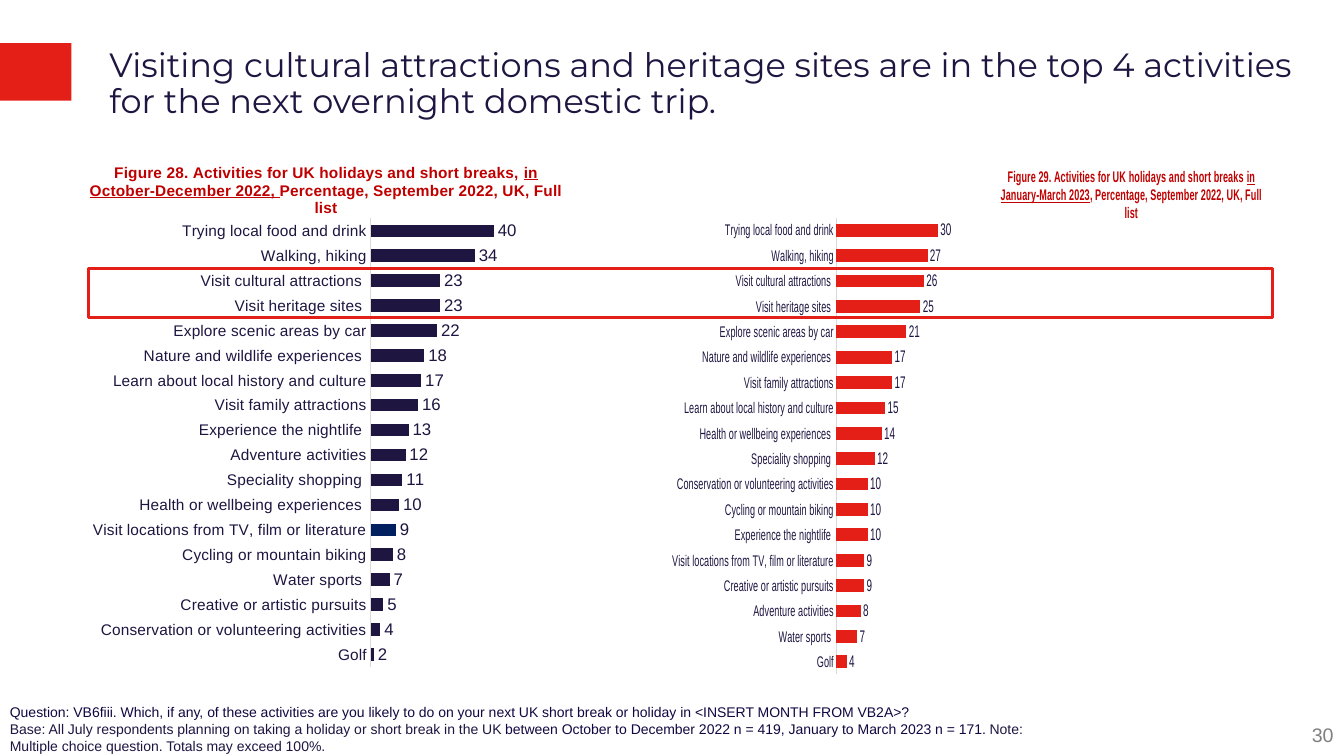
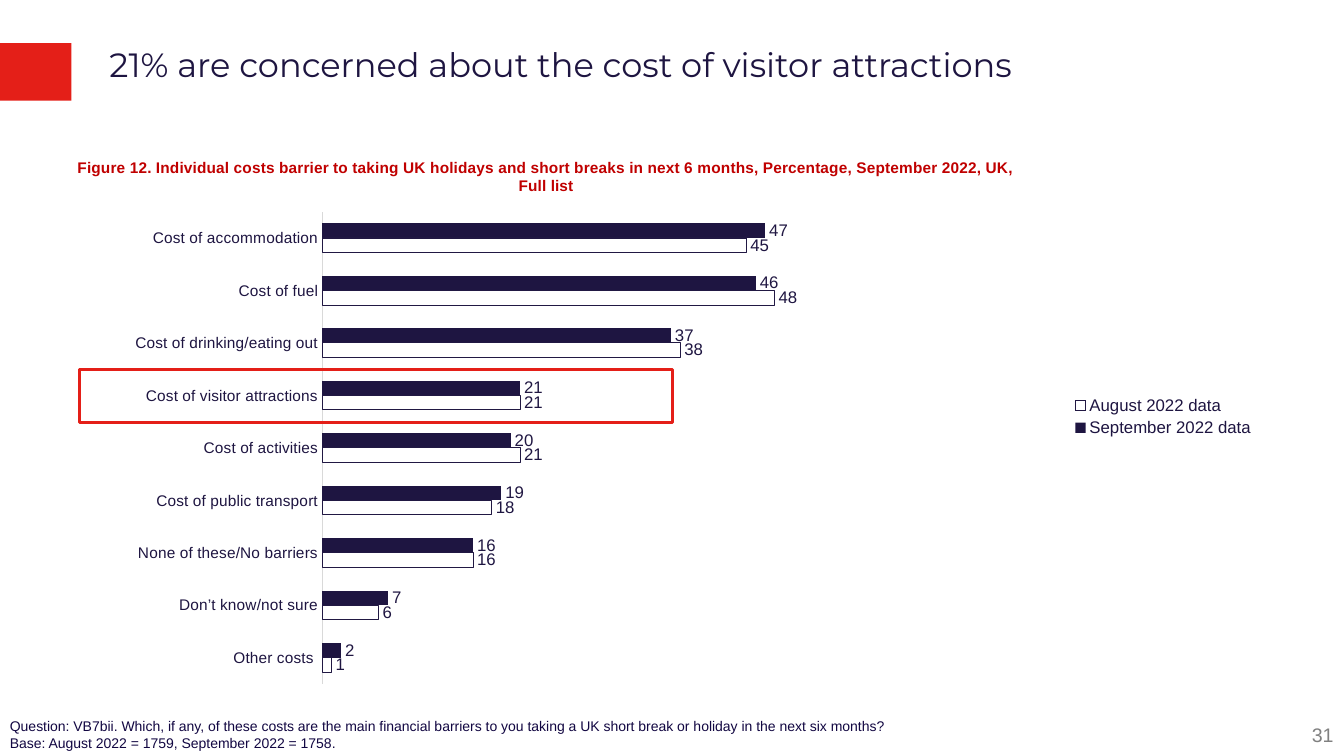
from lxml.etree import SubElement
from pptx import Presentation
from pptx.chart.data import CategoryChartData
from pptx.dml.color import RGBColor
from pptx.enum.chart import XL_CHART_TYPE, XL_LABEL_POSITION, XL_LEGEND_POSITION, XL_TICK_MARK
from pptx.enum.shapes import MSO_SHAPE
from pptx.enum.text import PP_ALIGN
from pptx.oxml.ns import qn
from pptx.util import Cm, Pt

NAVY = "1E1541"
OUTLINE = "211843"
INK = "120742"
BLUE = "002060"
RED = "E41F18"
DARK_RED = "C00000"
GREY = "808080"
AXIS_GREY = "D9D9D9"

FONTS = {
    "title": {"name": "Montserrat", "size": Pt(24), "color": NAVY},
    "figure": {"name": "Arial", "size": Pt(11), "bold": True, "color": DARK_RED},
    "category": {"name": "Arial", "size": Pt(11), "color": NAVY},
    "value": {"name": "Arial", "size": Pt(12), "color": NAVY},
    "note": {"name": "Arial", "size": Pt(10), "color": INK},
    "page": {"name": "Arial", "size": Pt(14), "color": GREY},
}


def rgb(value):
    return RGBColor.from_string(value)


def box(*lengths):
    return [Cm(length) for length in lengths]


def apply(target, values):
    for name, value in values.items():
        setattr(target, name, value)


def set_font(font, style, **changes):
    values = {**FONTS[style], **changes}
    font.color.rgb = rgb(values.pop("color"))
    apply(font, values)


def add_runs(paragraph, runs, style):
    for text, changes in runs:
        run = paragraph.add_run()
        run.text = text
        set_font(run.font, style, **changes)


def set_layout(parent, index, **values):
    existing = parent.find(qn("c:layout"))
    if existing is not None:
        parent.remove(existing)
    layout = SubElement(parent, qn("c:layout"))
    parent.insert(index, layout)
    manual = SubElement(layout, qn("c:manualLayout"))
    for name, value in values.items():
        SubElement(manual, qn(f"c:{name}")).set("val", str(value))


class Deck:
    """Hold the report style and add elements to the current slide."""

    def __init__(self):
        self.presentation = Presentation()
        apply(self.presentation, {"slide_width": Cm(33.87), "slide_height": Cm(19.05)})
        self.slide = None

    def add_slide(self, title, number):
        self.slide = self.presentation.slides.add_slide(self.presentation.slide_layouts[6])
        self.rectangle(box(0, 1.09, 1.8, 1.45), fill=RED)
        self.text(box(26.62, 18.08, 7.24, 0.86), [[(str(number), {})]], "page",
                  alignment=PP_ALIGN.RIGHT)
        self.text(box(2.51, 1.09, 30.5, 2.18), [[(title, {})]], "title", line_spacing=0.9)

    def text(self, place, paragraphs, style, **settings):
        frame = self.slide.shapes.add_textbox(*place).text_frame
        frame.word_wrap = True
        for index, runs in enumerate(paragraphs):
            paragraph = frame.add_paragraph() if index else frame.paragraphs[0]
            apply(paragraph, settings)
            add_runs(paragraph, runs, style)

    def rectangle(self, place, fill=None, line=None):
        shape = self.slide.shapes.add_shape(MSO_SHAPE.RECTANGLE, *place)
        shape.shadow.inherit = False
        self.paint(shape, fill, line, 2.25)

    def paint(self, target, fill, line, width):
        if fill:
            target.fill.solid()
            target.fill.fore_color.rgb = rgb(fill)
        else:
            target.fill.background()
        if line:
            target.line.color.rgb = rgb(line)
            target.line.width = Pt(width)
        else:
            target.line.fill.background()

    def bar_chart(self, place, title, title_at, plot_at, categories, series, minimum, gap):
        data = CategoryChartData(number_format="0")
        data.categories = categories
        for name, values, *_ in series:
            data.add_series(name, values)
        chart = self.slide.shapes.add_chart(XL_CHART_TYPE.BAR_CLUSTERED, *place, data).chart
        apply(chart.font, {"name": "Arial", "size": Pt(10)})
        chart.has_legend = len(series) > 1
        if chart.has_legend:
            apply(chart.legend, {"position": XL_LEGEND_POSITION.RIGHT, "include_in_layout": False})
            set_font(chart.legend.font, "value")
        self.figure_title(chart, title, title_at)
        self.axes(chart, minimum)
        plot = chart.plots[0]
        apply(plot, {"gap_width": gap, "vary_by_categories": False})
        for bars, (_, _, fill, line, label_color) in zip(plot.series, series):
            bars.invert_if_negative = False
            self.paint(bars.format, fill, line, 0.75)
            labels = bars.data_labels
            apply(labels, {"show_value": True, "number_format": "0",
                           "number_format_is_linked": False,
                           "position": XL_LABEL_POSITION.OUTSIDE_END})
            set_font(labels.font, "value", color=label_color)
        x, y, w, h = plot_at
        set_layout(chart.element.find(f".//{qn('c:plotArea')}"), 0, layoutTarget="inner",
                   xMode="edge", yMode="edge", x=x, y=y, w=w, h=h)
        return chart

    def figure_title(self, chart, runs, place):
        chart.has_title = True
        chart_title = chart.chart_title
        add_runs(chart_title.text_frame.paragraphs[0], runs, "figure")
        chart_title.include_in_layout = False
        x, y = place
        set_layout(chart_title.element, 1, xMode="edge", yMode="edge", x=x, y=y)

    def axes(self, chart, minimum):
        apply(chart.value_axis, {"minimum_scale": minimum, "maximum_scale": 100,
                                 "has_major_gridlines": False, "visible": False})
        axis = chart.category_axis
        apply(axis, {"reverse_order": True, "has_major_gridlines": False,
                     "major_tick_mark": XL_TICK_MARK.NONE,
                     "minor_tick_mark": XL_TICK_MARK.NONE})
        set_font(axis.tick_labels.font, "category")
        axis.format.line.color.rgb = rgb(AXIS_GREY)
        axis.format.line.width = Pt(0.75)


FOOD, WALK = "Trying local food and drink", "Walking, hiking"
CULTURE, HERITAGE = "Visit cultural attractions ", "Visit heritage sites "
SCENIC, NATURE = "Explore scenic areas by car", "Nature and wildlife experiences "
HISTORY, FAMILY = "Learn about local history and culture", "Visit family attractions"
NIGHTLIFE, ADVENTURE = "Experience the nightlife ", "Adventure activities"
SHOPPING, HEALTH = "Speciality shopping ", "Health or wellbeing experiences "
SCREEN, CYCLING = "Visit locations from TV, film or literature", "Cycling or mountain biking"
WATER, CREATIVE = "Water sports ", "Creative or artistic pursuits"
CONSERVATION, GOLF = "Conservation or volunteering activities", "Golf"

AUTUMN = {
    FOOD: 40, WALK: 34, CULTURE: 23, HERITAGE: 23, SCENIC: 22, NATURE: 18,
    HISTORY: 17, FAMILY: 16, NIGHTLIFE: 13, ADVENTURE: 12, SHOPPING: 11, HEALTH: 10,
    SCREEN: 9, CYCLING: 8, WATER: 7, CREATIVE: 5, CONSERVATION: 4, GOLF: 2,
}
WINTER = {
    FOOD: 30, WALK: 27, CULTURE: 26, HERITAGE: 25, SCENIC: 21, NATURE: 17,
    FAMILY: 17, HISTORY: 15, HEALTH: 14, SHOPPING: 12, CONSERVATION: 10, CYCLING: 10,
    NIGHTLIFE: 10, SCREEN: 9, CREATIVE: 9, ADVENTURE: 8, WATER: 7, GOLF: 4,
}
COSTS = {
    "Cost of accommodation": (47, 45),
    "Cost of fuel": (46, 48),
    "Cost of drinking/eating out": (37, 38),
    "Cost of visitor attractions": (21, 21),
    "Cost of activities": (20, 21),
    "Cost of public transport": (19, 18),
    "None of these/No barriers": (16, 16),
    "Don’t know/not sure": (7, 6),
    "Other costs ": (2, 1),
}
UNDERLINED = {"underline": True}


def add_activities(deck):
    deck.add_slide("Visiting cultural attractions and heritage sites are in the top 4 "
                   "activities for the next overnight domestic trip.", 30)
    survey = "Percentage, September 2022, UK, Full list"
    figures = [
        (box(2.03, 3.86, 15.37, 13.36), AUTUMN, NAVY, (0.01, 0.01), (0.476, 0.123, 0.512, 0.846),
         [("Figure 28. Activities for UK holidays and short breaks, ", {}),
          ("in October-December 2022, ", UNDERLINED), (survey, {})]),
        (box(16.94, 3.84, 14.91, 13.36), WINTER, RED, (0.47, 0.02), (0.479, 0.123, 0.996, 0.862),
         [("Figure 29. Activities for UK holidays and short breaks ", {}),
          ("in January-March 2023", UNDERLINED), (f", {survey}", {})]),
    ]
    for place, activities, fill, title_at, plot_at, title in figures:
        series = [("Series 1", list(activities.values()), fill, None, NAVY)]
        chart = deck.bar_chart(place, title, title_at, plot_at, list(activities), series, 1, 100)
        if activities is AUTUMN:
            screen_bar = chart.plots[0].series[0].points[list(activities).index(SCREEN)]
            deck.paint(screen_bar.format, BLUE, None, 0.75)
    deck.text(box(0, 17.6, 26.59, 1.45), [
        [("Question: VB6fiii. Which, if any, of these activities are you likely to do on your "
          "next UK short break or holiday in <INSERT MONTH FROM VB2A>?", {})],
        [("Base: All July respondents planning on taking a holiday or short break in the UK ",
          {"color": NAVY}),
         ("between October to December 2022 n = 419, January to March 2023 n = 171. ", {}),
         ("Note: Multiple choice question. Totals may exceed 100%.", {"color": NAVY})],
    ], "note")
    deck.rectangle(box(2.24, 6.76, 29.84, 1.24), line=RED)


def add_costs(deck):
    deck.add_slide("21% are concerned about the cost of visitor attractions", 31)
    september, august = zip(*COSTS.values())
    deck.bar_chart(
        box(1.88, 3.76, 30, 13.49),
        [("Figure 12. Individual costs barrier to taking UK holidays and short breaks in next "
          "6 months, Percentage, September 2022, UK, Full list", {})],
        (0, 0.01), (0.208, 0.117, 0.792, 0.882), list(COSTS),
        [("September 2022 data", september, NAVY, None, OUTLINE),
         ("August 2022 data", august, None, OUTLINE, NAVY)], 0, 160)
    deck.text(box(0, 17.96, 24.69, 1.09), [
        [("Question: VB7bii. Which, if any, of these costs are the main financial barriers to "
          "you taking a UK short break or holiday in the next six months?", {})],
        [("Base: August 2022 = 1759, September 2022 = 1758.", {})],
    ], "note")
    deck.rectangle(box(2.01, 9.32, 14.94, 1.32), line=RED)


def main():
    deck = Deck()
    add_activities(deck)
    add_costs(deck)
    deck.presentation.save("out.pptx")


if __name__ == "__main__":
    main()
